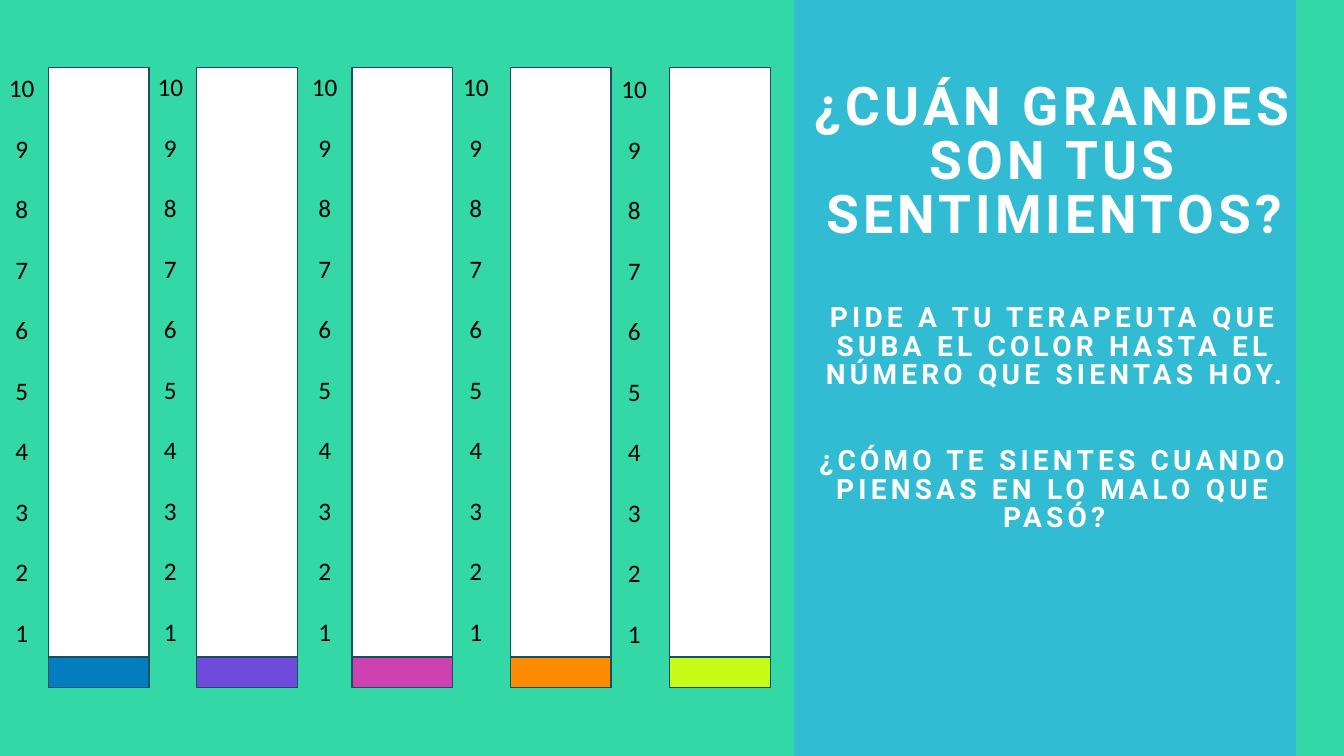
from pptx import Presentation
from pptx.dml.color import RGBColor
from pptx.enum.shapes import MSO_SHAPE
from pptx.enum.text import MSO_ANCHOR, PP_ALIGN
from pptx.oxml.ns import qn
from pptx.util import Inches, Pt
from lxml import etree

RECTANGLE = MSO_SHAPE.RECTANGLE
TOP = MSO_ANCHOR.TOP
CENTER = PP_ALIGN.CENTER

THERMOMETERS = [
    (3.6, 0.04, 9.6, "027EBF"),
    (14.63, 11.1, 9.47, "6F4BDC"),
    (26.18, 22.58, 9.47, "CD41B0"),
    (37.96, 33.83, 9.47, "FF8B00"),
    (49.81, 45.61, 9.73, "C6FC15"),
]
MESSAGES = [
    ("¿CUÁN GRANDES SON TUS SENTIMIENTOS?", 38, 0),
    ("PIDE A TU TERAPEUTA QUE SUBA EL COLOR HASTA EL NÚMERO QUE SIENTAS HOY.", 20, 43),
    ("¿CÓMO TE SIENTES CUANDO PIENSAS EN LO MALO QUE PASÓ?", 20, 41),
]
BAR_TOP, BAR_WIDTH, BAR_HEIGHT, LEVEL_HEIGHT = 8.93, 7.5, 82, 4


def color(value):
    return RGBColor.from_string(value)


def apply(target, values):
    for name, value in values.items():
        setattr(target, name, value)


class FeelingsSlide:
    outline = "164F62"
    background = "34D8A7"

    def __init__(self, presentation):
        self.width = presentation.slide_width
        self.height = presentation.slide_height
        self.slide = presentation.slides.add_slide(presentation.slide_layouts[6])
        fill = self.slide.background.fill
        fill.solid()
        fill.fore_color.rgb = color(self.background)

    def place(self, left, top, width, height):
        return [round(share * length / 100) for share, length in
                zip((left, top, width, height), (self.width, self.height) * 2)]

    def rectangle(self, area, fill, outlined=True):
        shape = self.slide.shapes.add_shape(RECTANGLE, *self.place(*area))
        shape.shadow.inherit = False
        shape.fill.solid()
        shape.fill.fore_color.rgb = color(fill)
        if outlined:
            shape.line.color.rgb = color(self.outline)
            shape.line.width = Pt(1)
        else:
            shape.line.fill.background()
        return shape

    def frame(self, shape, **values):
        apply(shape.text_frame, {"margin_left": 0, "margin_right": 0, "margin_top": 0,
                                 "margin_bottom": 0, "vertical_anchor": TOP, **values})
        return shape.text_frame

    def add_text(self, frame, index, text, ink, font, **spacing):
        paragraph = frame.add_paragraph() if index else frame.paragraphs[0]
        apply(paragraph, {"alignment": CENTER, **spacing})
        run = paragraph.add_run()
        run.text = text
        apply(run.font, font)
        run.font.color.rgb = color(ink)
        return run

    def scale(self, area):
        box = self.slide.shapes.add_textbox(*self.place(*area))
        frame = self.frame(box, word_wrap=False)
        font = {"name": "Calibri", "size": Pt(18)}
        for index, number in enumerate(range(10, 0, -1)):
            self.add_text(frame, index, str(number), "000000", font,
                          line_spacing=Pt(21.6), space_before=Pt(21.6 if index else 0))

    def panel(self, area, fill, opacity, messages):
        shape = self.rectangle(area, fill, outlined=False)
        tint = shape._element.spPr.find(qn("a:solidFill"))[0]
        etree.SubElement(tint, qn("a:alpha"), val=str(opacity * 1000))
        frame = self.frame(shape, word_wrap=True, margin_left=Inches(0.18),
                           margin_top=Inches(0.81))
        for index, (text, size, gap) in enumerate(messages):
            font = {"name": "Roboto", "size": Pt(size), "bold": True}
            run = self.add_text(frame, index, text, "FFFFFF", font,
                                line_spacing=0.85, space_before=Pt(gap))
            run.font._element.set("spc", "300")


def main():
    presentation = Presentation()
    presentation.slide_width = Inches(13.33)
    presentation.slide_height = Inches(7.5)
    feelings = FeelingsSlide(presentation)
    feelings.panel((59.11, 0, 37.31, 100), "32B5DF", 80, MESSAGES)
    level_top = BAR_TOP + BAR_HEIGHT - LEVEL_HEIGHT
    for bar_left, scale_left, scale_top, level_color in THERMOMETERS:
        feelings.rectangle((bar_left, BAR_TOP, BAR_WIDTH, BAR_HEIGHT), "FFFFFF")
        feelings.rectangle((bar_left, level_top, BAR_WIDTH, LEVEL_HEIGHT), level_color)
        feelings.scale((scale_left, scale_top, 3.15, 76.8))
    presentation.save("out.pptx")


if __name__ == "__main__":
    main()
